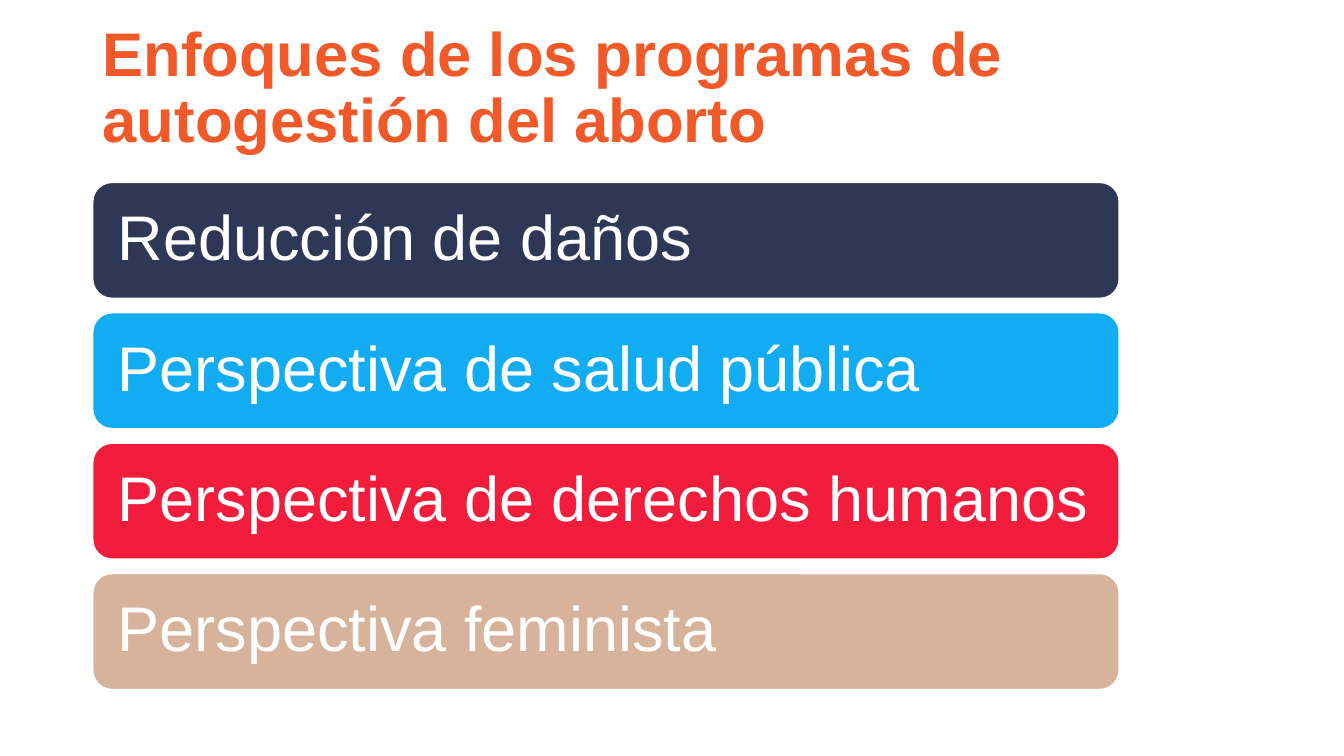
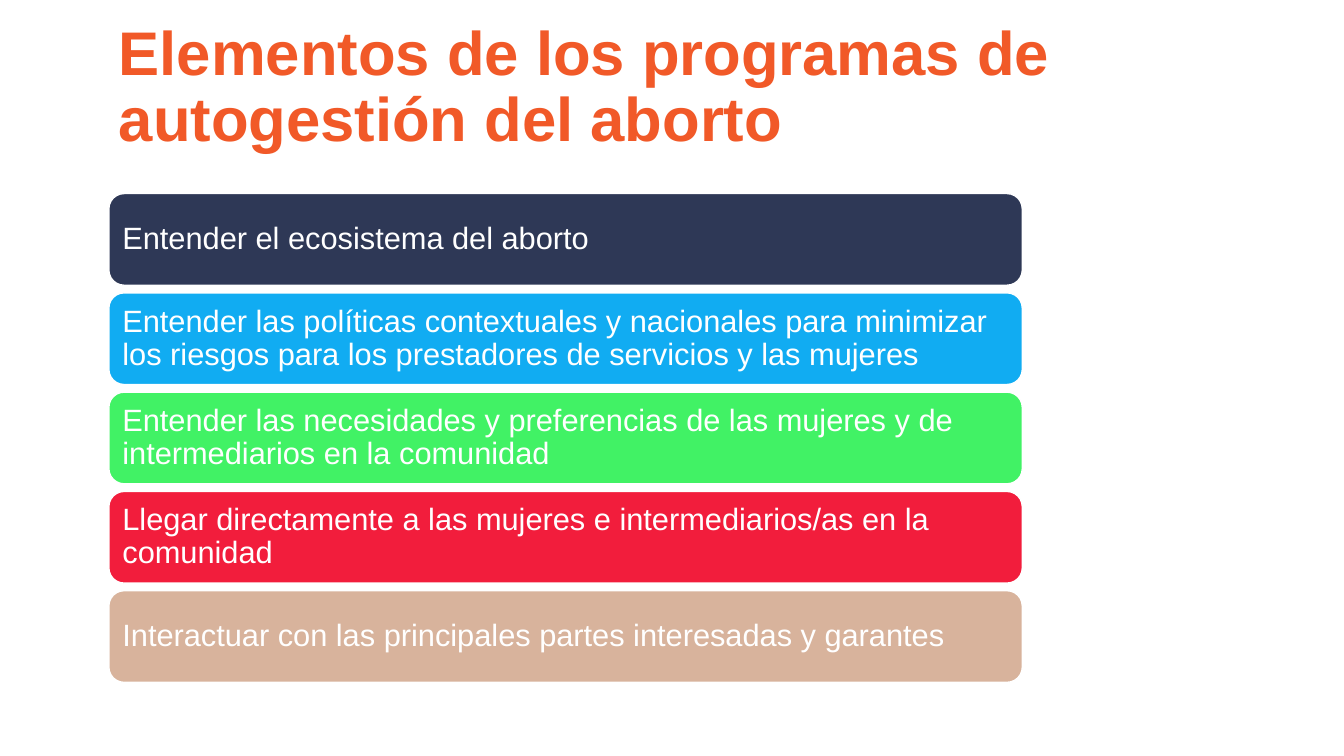
from dataclasses import dataclass

from pptx import Presentation
from pptx.dml.color import RGBColor as RGB
from pptx.enum.shapes import MSO_SHAPE as SHAPE
from pptx.enum.text import MSO_ANCHOR as ANCHOR, PP_ALIGN as ALIGN
from pptx.util import Inches, Pt


@dataclass(frozen=True)
class Theme:
    font: str = "Arial"
    title: str = "F15928"
    white: str = "FFFFFF"
    navy: str = "2E3856"
    blue: str = "11ACF2"
    green: str = "41F265"
    red: str = "F21D3C"
    sand: str = "D8B39C"
    title_size: int = 44
    large_size: int = 45
    body_size: int = 22


T = Theme()

SLIDES = [
    dict(
        title="Enfoques de los programas de autogestión del aborto",
        title_box=(10.34, 1.78),
        left=0.92, top=1.81, bottom=6.84, width=10.18, height=1.15,
        inset=0.19, size=T.large_size,
        bars=[
            ("Reducción de daños", T.navy),
            ("Perspectiva de salud pública", T.blue),
            ("Perspectiva de derechos humanos", T.red),
            ("Perspectiva feminista", T.sand),
        ],
    ),
    dict(
        title="Elementos de los programas de autogestión del aborto",
        title_box=(9.92, 1.76),
        left=1.08, top=1.92, bottom=6.77, width=9.06, height=0.91,
        inset=0.09, size=T.body_size,
        bars=[
            ("Entender el ecosistema del aborto", T.navy),
            ("Entender las políticas contextuales y nacionales para minimizar "
             "los riesgos para los prestadores de servicios y las mujeres", T.blue),
            ("Entender las necesidades y preferencias de las mujeres y de "
             "intermediarios en la comunidad", T.green),
            ("Llegar directamente a las mujeres e intermediarios/as en la "
             "comunidad", T.red),
            ("Interactuar con las principales partes interesadas y garantes", T.sand),
        ],
    ),
]


def write(sp, text, *, size, color, bold=False, inset=(0.1, 0.05)):
    tf = sp.text_frame
    tf.word_wrap = True
    tf.vertical_anchor = ANCHOR.MIDDLE
    tf.margin_left = tf.margin_right = Inches(inset[0])
    tf.margin_top = tf.margin_bottom = Inches(inset[1])
    p = tf.paragraphs[0]
    p.alignment = ALIGN.LEFT
    p.line_spacing = 0.9
    r = p.add_run()
    r.text = text
    r.font.name = T.font
    r.font.size = Pt(size)
    r.font.bold = bold
    r.font.color.rgb = RGB.from_string(color)


def add_title(s, text, left, width, height):
    sp = s.shapes.add_textbox(Inches(left), 0, Inches(width), Inches(height))
    write(sp, text, size=T.title_size, color=T.title, bold=True)


def add_bar(s, text, fill, box, inset, size):
    sp = s.shapes.add_shape(SHAPE.ROUNDED_RECTANGLE, *map(Inches, box))
    sp.shadow.inherit = False
    sp.fill.solid()
    sp.fill.fore_color.rgb = RGB.from_string(fill)
    sp.line.color.rgb = RGB.from_string(T.white)
    sp.line.width = Pt(1)
    write(sp, text, size=size, color=T.white, inset=(inset, inset))


def build_slide(prs, d):
    s = prs.slides.add_slide(prs.slide_layouts[6])
    add_title(s, d["title"], d["left"], *d["title_box"])
    pitch = (d["bottom"] - d["top"] - d["height"]) / (len(d["bars"]) - 1)
    for i, (text, fill) in enumerate(d["bars"]):
        box = (d["left"], d["top"] + i * pitch, d["width"], d["height"])
        add_bar(s, text, fill, box, d["inset"], d["size"])


def main():
    prs = Presentation()
    prs.slide_width, prs.slide_height = Inches(13.33), Inches(7.5)
    for d in SLIDES:
        build_slide(prs, d)
    prs.save("out.pptx")


if __name__ == "__main__":
    main()
